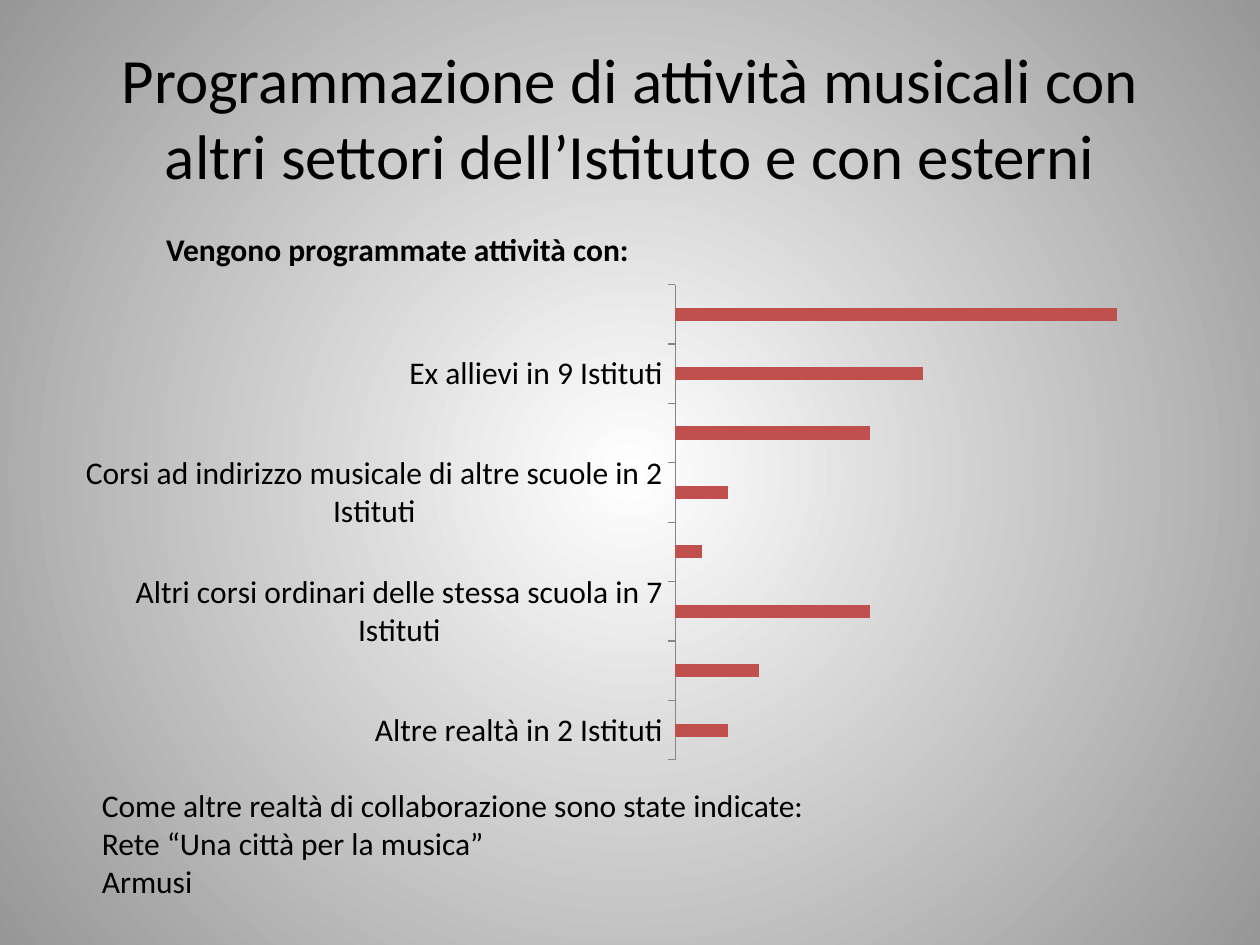
"""Build the slide on musical activities planned with other sectors."""
from lxml import etree
from pptx import Presentation
from pptx.chart.data import CategoryChartData
from pptx.dml.color import RGBColor
from pptx.enum.chart import XL_CHART_TYPE as ChartType, XL_TICK_MARK as Tick
from pptx.enum.text import MSO_ANCHOR as Anchor, PP_ALIGN as Align
from pptx.oxml import parse_xml
from pptx.oxml.ns import nsdecls, qn
from pptx.util import Inches, Pt

FONT = "Calibri"
TITLE = ["Programmazione di attività musicali con altri settori dell’Istituto e con esterni"]
HEADING = ["Vengono programmate attività con:"]
NOTES = [
    "Come altre realtà di collaborazione sono state indicate:",
    "Rete “Una città per la musica”",
    "Armusi",
]
ACTIVITIES = [
    ("Altre realtà in 2 Istituti", 12),
    ("Conservatorio in 3 Istituti", 19),
    ("Altri corsi ordinari delle stessa scuola in 7 Istituti", 44),
    ("Scuole secondarie di II°in 1 Istituti", 6),
    ("Corsi ad indirizzo musicale di altre scuole in 2 Istituti", 12),
    ("Scuole di musica-Bande-Cori del territorio in 7 Ist.", 44),
    ("Ex allievi in 9 Istituti", 56),
    ("Scuole primarie in 16 Istituti", 100),
]
SERIES_COLORS = ["4F81BD", "C0504D", "9BBB59"]
FILLED_SERIES = 1
PLOT_LAYOUT = {"x": 0.54, "y": 0.02, "w": 0.39, "h": 0.96}


def color(value):
    return RGBColor.from_string(value)


def set_font(font, size, bold=False):
    font.name, font.size, font.bold = FONT, Pt(size), bold
    font.color.rgb = color("000000")


def add_text(page, place, lines, size=18, bold=False, align=Align.LEFT,
             anchor=Anchor.TOP, wrap=True):
    frame = page.shapes.add_textbox(*map(Inches, place)).text_frame
    frame.word_wrap, frame.vertical_anchor = wrap, anchor
    frame.text = "\n".join(lines)
    for para in frame.paragraphs:
        para.alignment = align
        set_font(para.font, size, bold)


def paint_background(page):
    fill = page.background.fill
    fill.gradient()
    for stop, shade in zip(fill.gradient_stops, ["FFFFFF", "979797"]):
        stop.color.rgb = color(shade)
    gradient = next(page.element.iter(qn("a:gradFill")))
    gradient.replace(gradient.find(qn("a:lin")), parse_xml(
        f'<a:path {nsdecls("a")} path="circle">'
        '<a:fillToRect l="50000" t="50000" r="50000" b="50000"/></a:path>'))


def place_plot(chart):
    plot_area = next(chart.element.iter(qn("c:plotArea")))
    for old in plot_area.findall(qn("c:layout")):
        plot_area.remove(old)
    layout = etree.Element(qn("c:layout"))
    manual = etree.SubElement(layout, qn("c:manualLayout"))
    settings = {"layoutTarget": "inner", "xMode": "edge", "yMode": "edge", **PLOT_LAYOUT}
    for name, value in settings.items():
        etree.SubElement(manual, qn(f"c:{name}")).set("val", str(value))
    plot_area.insert(0, layout)


def add_activity_chart(page, place):
    data = CategoryChartData()
    data.categories = [label for label, _ in ACTIVITIES]
    for index in range(len(SERIES_COLORS)):
        values = [value if index == FILLED_SERIES else None for _, value in ACTIVITIES]
        data.add_series(f"Series {index + 1}", values)
    chart = page.shapes.add_chart(
        ChartType.BAR_CLUSTERED, *map(Inches, place), data).chart
    set_font(chart.font, 18)
    chart.has_legend = chart.has_title = False
    plot = chart.plots[0]
    plot.gap_width, plot.vary_by_categories = 150, False
    for series, shade in zip(plot.series, SERIES_COLORS):
        series.format.fill.solid()
        series.format.fill.fore_color.rgb = color(shade)
    labels, scale = chart.category_axis, chart.value_axis
    labels.major_tick_mark, labels.minor_tick_mark = Tick.OUTSIDE, Tick.NONE
    labels.has_major_gridlines = False
    labels.format.line.color.rgb = color("868686")
    labels.format.line.width = Pt(0.75)
    scale.visible = scale.has_major_gridlines = False
    scale.minimum_scale, scale.maximum_scale = 0, 100
    place_plot(chart)


def main():
    deck = Presentation()
    deck.slide_width, deck.slide_height = Inches(10), Inches(7.5)
    page = deck.slides.add_slide(deck.slide_layouts[6])
    paint_background(page)
    add_text(page, (0.5, 0.3, 9, 1.25), TITLE, size=36,
             align=Align.CENTER, anchor=Anchor.MIDDLE)
    add_activity_chart(page, (0.5, 2.18, 9, 3.93))
    add_text(page, (1.22, 1.78, 3.91, 0.4), HEADING, bold=True, wrap=False)
    add_text(page, (0.71, 6.19, 8.58, 1.01), NOTES)
    deck.save("out.pptx")


if __name__ == "__main__":
    main()
